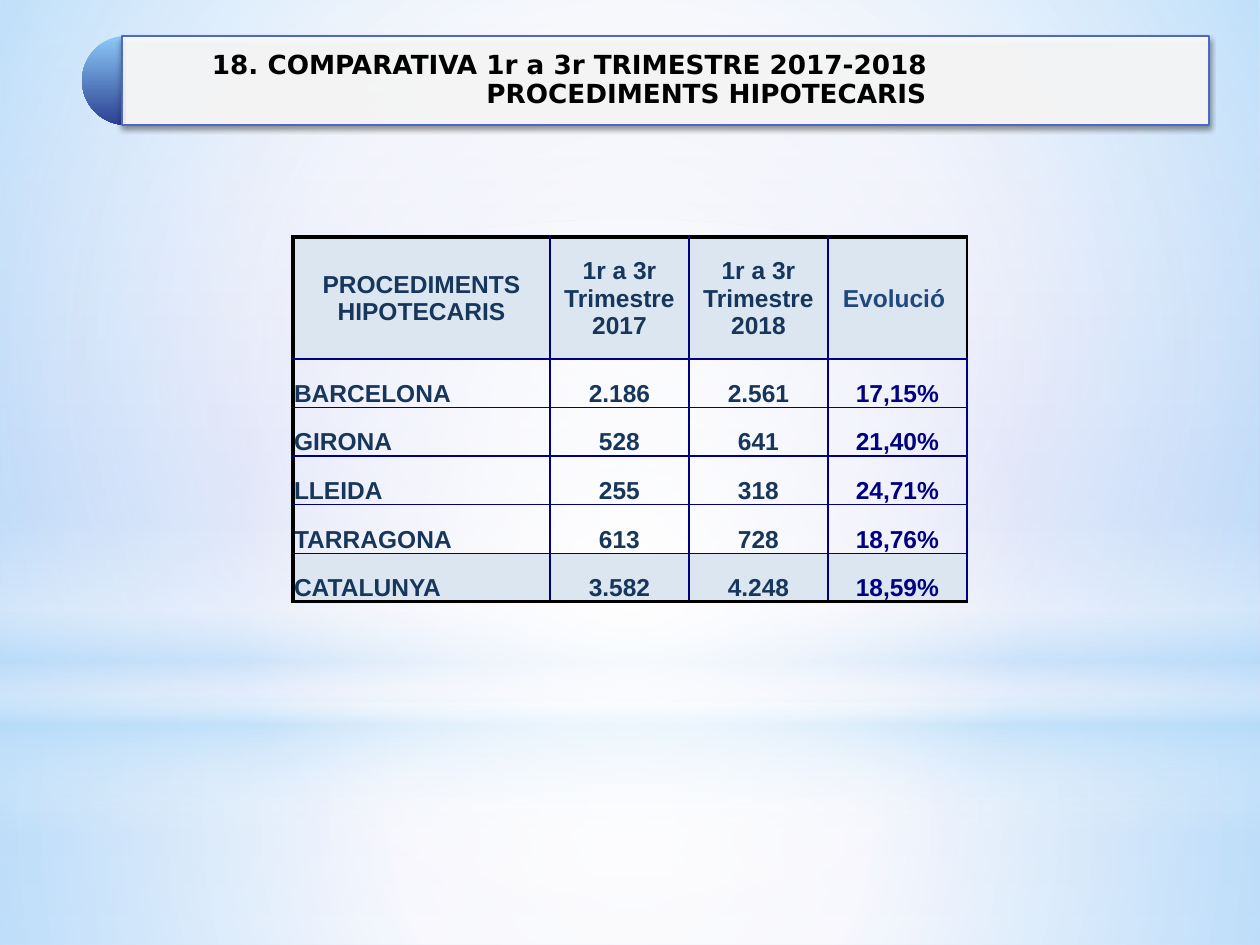
from lxml.etree import SubElement
from pptx import Presentation
from pptx.dml.color import RGBColor
from pptx.enum.shapes import MSO_SHAPE
from pptx.enum.text import MSO_ANCHOR, MSO_AUTO_SIZE, PP_ALIGN
from pptx.oxml.ns import qn
from pptx.util import Emu, Pt

BLACK = RGBColor(0x00, 0x00, 0x00)
WHITE = RGBColor(0xFF, 0xFF, 0xFF)
SKY = RGBColor(0xB4, 0xDC, 0xFA)
BACK_TOP = RGBColor(0xEB, 0xEE, 0xF9)
BACK_MIDDLE = RGBColor(0xC1, 0xC7, 0xF2)
BACK_BOTTOM = RGBColor(0xE1, 0xE3, 0xF8)
PIE_TOP = RGBColor(0x8C, 0xC9, 0xF7)
PIE_BOTTOM = RGBColor(0x2B, 0x40, 0x92)
BAND_LINE = RGBColor(0x4E, 0x67, 0xC8)
NAVY = RGBColor(0x00, 0x00, 0x80)
INK = RGBColor(0x16, 0x36, 0x5C)
EVOLUTION_INK = RGBColor(0x1F, 0x49, 0x7D)
PALE = RGBColor(0xDC, 0xE6, 0xF1)

ROWS = [
    ("PROCEDIMENTS HIPOTECARIS", "1r a 3r Trimestre 2017", "1r a 3r Trimestre 2018", "Evolució "),
    ("BARCELONA", "2.186", "2.561", "17,15%"),
    ("GIRONA", "528", "641", "21,40%"),
    ("LLEIDA", "255", "318", "24,71%"),
    ("TARRAGONA", "613", "728", "18,76%"),
    ("CATALUNYA", "3.582", "4.248", "18,59%"),
]


def px(length):
    return Emu(round(length * 914400 / 126))


def add_color(parent, color, opacity=100):
    node = SubElement(parent, qn("a:srgbClr"), val=str(color))
    if opacity < 100:
        SubElement(node, qn("a:alpha"), val=str(opacity * 1000))


def set_gradient(parent, stops, radial=False):
    """Replace the solid fill in parent; stops are (position, colour, opacity)."""
    solid = parent.find(qn("a:solidFill"))
    grad = SubElement(parent, qn("a:gradFill"), rotWithShape="1")
    parent.replace(solid, grad)
    stop_list = SubElement(grad, qn("a:gsLst"))
    for position, color, opacity in stops:
        add_color(SubElement(stop_list, qn("a:gs"), pos=str(position * 1000)), color, opacity)
    if radial:
        center = SubElement(grad, qn("a:path"), path="circle")
        SubElement(center, qn("a:fillToRect"), l="50000", t="50000", r="50000", b="50000")
    else:
        SubElement(grad, qn("a:lin"), ang="5400000", scaled="0")


def add_box(page, kind, box, stops=None, radial=False):
    shape = page.shapes.add_shape(kind, *map(px, box))
    shape.shadow.inherit = False
    shape.line.fill.background()
    shape.fill.solid()
    if stops:
        set_gradient(shape._element.spPr, stops, radial)
    return shape


def write_text(para, text, font="Arial", size=14, color=INK, align=PP_ALIGN.CENTER, spacing=1.0):
    para.alignment = align
    para.line_spacing = spacing
    para.space_before = para.space_after = Pt(0)
    span = para.add_run()
    span.text = text
    span.font.name, span.font.size, span.font.bold = font, Pt(size), True
    span.font.color.rgb = color


def set_margins(target, left, top, right, bottom):
    target.margin_left, target.margin_top = px(left), px(top)
    target.margin_right, target.margin_bottom = px(right), px(bottom)


def add_backdrop(page, box):
    left, top, width, height = box
    page.background.fill.solid()
    set_gradient(page._element.cSld.find(".//" + qn("p:bgPr")),
                 [(0, BACK_TOP, 100), (50, BACK_MIDDLE, 100), (100, BACK_BOTTOM, 100)])
    horizon = 703
    rect = MSO_SHAPE.RECTANGLE
    add_box(page, rect, (left, top + horizon, width, height - horizon),
            [(0, WHITE, 91), (37, WHITE, 76), (100, SKY, 79)], radial=True)
    add_box(page, rect, (left, top, width, horizon),
            [(0, WHITE, 89), (48, WHITE, 62), (100, SKY, 79)], radial=True)
    add_box(page, rect, (left, top + 519, width, 315),
            [(0, WHITE, 0), (29, WHITE, 30), (45, SKY, 40),
             (55, WHITE, 26), (65, SKY, 60), (100, WHITE, 0)])
    add_box(page, MSO_SHAPE.OVAL, (left, top + 220, width, horizon),
            [(0, WHITE, 100), (56, WHITE, 0)], radial=True)


def add_heading(page, box):
    left, top, width, height = box
    # Half disc at the left end
    pie = add_box(page, MSO_SHAPE.PIE, (left, top, height, height),
                  [(0, PIE_TOP, 100), (100, PIE_BOTTOM, 100)])
    pie.adjustments[0], pie.adjustments[1] = 54, 162

    # Band with a soft shadow
    band_box = (left + 40, top, width - 40, height)
    band = add_box(page, MSO_SHAPE.RECTANGLE, band_box)
    band.fill.fore_color.rgb = WHITE
    SubElement(band._element.spPr.find(".//" + qn("a:srgbClr")), qn("a:alpha"), val="90000")
    band.line.color.rgb, band.line.width = BAND_LINE, Pt(0.75)
    shadow = SubElement(band._element.spPr.find(qn("a:effectLst")), qn("a:outerShdw"),
                        blurRad=str(Pt(3.1)), dist=str(Pt(1.8)), dir="5400000", rotWithShape="0")
    add_color(shadow, BLACK, 45)

    # Title, brought in front of the band
    title = page.shapes.title
    title.left, title.top, title.width, title.height = map(px, band_box)
    page.shapes._spTree.append(title._element)
    frame = title.text_frame
    frame.word_wrap, frame.auto_size = True, MSO_AUTO_SIZE.NONE
    frame.vertical_anchor = MSO_ANCHOR.MIDDLE
    set_margins(frame, 8, 8, 8, 8)
    style = dict(font="DejaVu Sans", size=15, color=BLACK, spacing=0.9)
    first = frame.paragraphs[0]
    write_text(first, "18. COMPARATIVA 1r a 3r TRIMESTRE 2017-2018", align=PP_ALIGN.LEFT, **style)
    first._p.get_or_add_pPr().set("marL", str(px(82)))
    write_text(frame.add_paragraph(), "PROCEDIMENTS HIPOTECARIS", **style)


def set_borders(cell, **sides):
    """Sides L, R, T, B are (colour, points); they go before the fill."""
    props = cell._tc.get_or_add_tcPr()
    for index, side in enumerate("LRTB"):
        color, points = sides[side]
        line = SubElement(props, qn("a:ln" + side), w=str(Pt(points)))
        add_color(SubElement(line, qn("a:solidFill")), color)
        props.insert(index, line)


def add_figures(page, box):
    left, top, width, height = box
    header, value_width = 122, 139
    last_row, last_col = len(ROWS) - 1, len(ROWS[0]) - 1
    table = page.shapes.add_table(len(ROWS), len(ROWS[0]), *map(px, box)).table
    table.first_row = table.horz_banding = False
    for index, column in enumerate(table.columns):
        column.width = px(value_width if index else width - last_col * value_width)
    for index, row in enumerate(table.rows):
        row.height = px((height - header) / last_row if index else header)

    thin, thick = (NAVY, 1), (BLACK, 2)
    for r, values in enumerate(ROWS):
        for c, value in enumerate(values):
            cell = table.cell(r, c)
            set_margins(cell, 1, 1, 1, 0)
            cell.vertical_anchor = MSO_ANCHOR.BOTTOM if r else MSO_ANCHOR.MIDDLE
            color = INK
            if c == last_col:
                color = NAVY if r else EVOLUTION_INK
            align = PP_ALIGN.LEFT if r and c == 0 else PP_ALIGN.CENTER
            write_text(cell.text_frame.paragraphs[0], value, color=color, align=align)
            if r in (0, last_row):
                cell.fill.solid()
                cell.fill.fore_color.rgb = PALE
            else:
                cell.fill.background()
            set_borders(cell, L=thin if c else thick,
                        R=(BLACK, 1) if r == 0 and c == last_col else thin,
                        T=thin if r else thick,
                        B=thick if r == last_row else thin)


def main():
    deck = Presentation()
    deck.slide_width, deck.slide_height = px(1260), px(945)
    page = deck.slides.add_slide(deck.slide_layouts[5])
    add_backdrop(page, (0, 0, 1260, 945))
    add_heading(page, (82, 36, 1127, 89))
    add_figures(page, (293, 237, 674, 365))
    deck.save("out.pptx")


if __name__ == "__main__":
    main()
